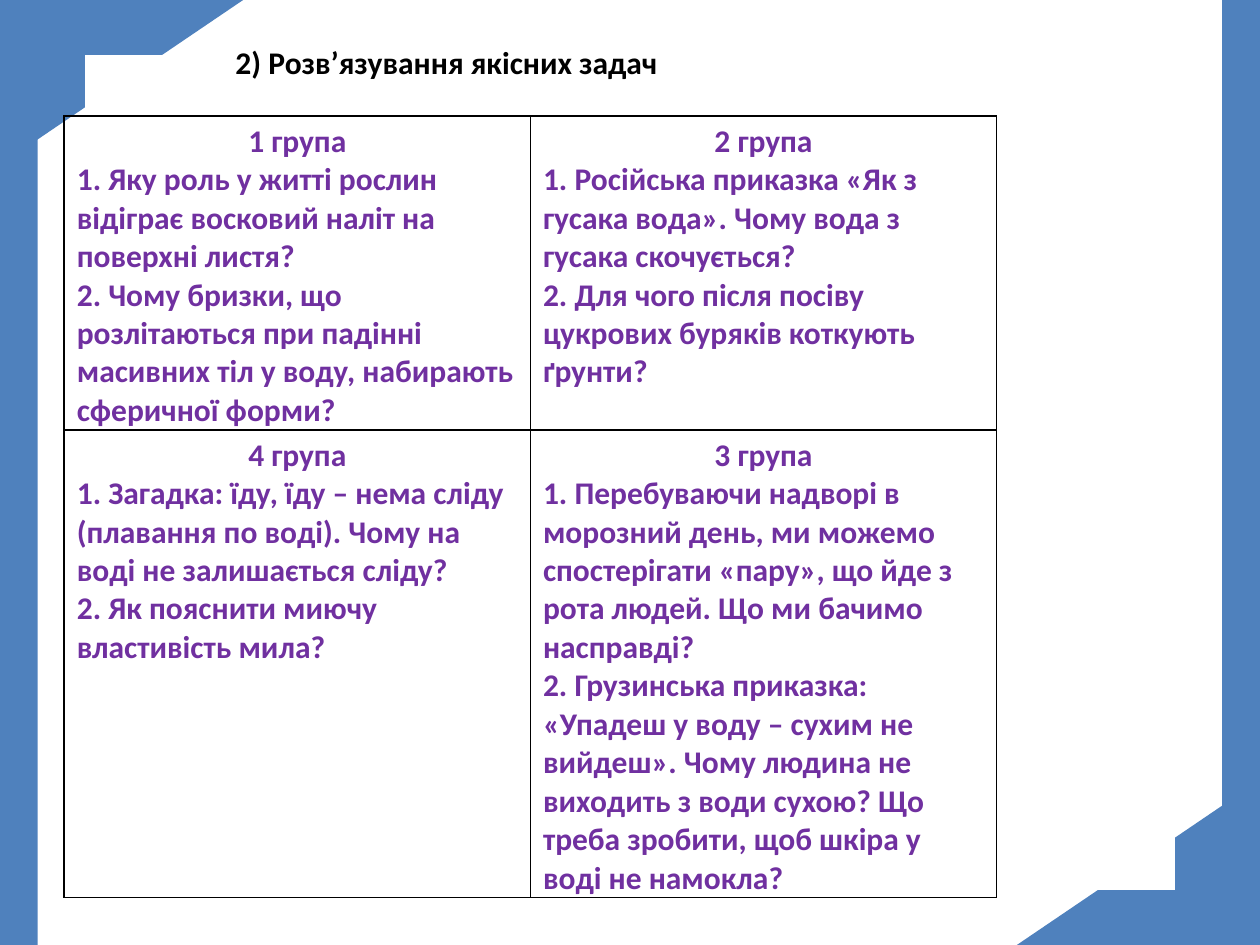
from lxml import etree
from pptx import Presentation
from pptx.dml.color import RGBColor
from pptx.enum.shapes import MSO_SHAPE
from pptx.enum.text import MSO_AUTO_SIZE, PP_ALIGN
from pptx.oxml.ns import qn
from pptx.util import Inches, Pt

BLUE = RGBColor(0x4F, 0x81, 0xBD)
PURPLE = RGBColor(0x70, 0x30, 0xA0)
BLACK = RGBColor(0, 0, 0)
RECTANGLE = MSO_SHAPE.RECTANGLE
HALF_FRAME = MSO_SHAPE.HALF_FRAME
LEFT = PP_ALIGN.LEFT
CENTER = PP_ALIGN.CENTER

SLIDE_WIDTH, SLIDE_HEIGHT = 10, 7.5


def write_paragraph(paragraph, text, color=BLACK, alignment=LEFT, size=18):
    paragraph.alignment = alignment
    run = paragraph.add_run()
    run.text = text
    run.font.name = "Calibri"
    run.font.size = Pt(size)
    run.font.bold = True
    run.font.color.rgb = color


def add_cell_borders(cell):
    properties = cell._tc.get_or_add_tcPr()
    for position, side in enumerate(("lnL", "lnR", "lnT", "lnB")):
        line = etree.Element(qn(f"a:{side}"), w=str(Pt(1)))
        fill = etree.SubElement(line, qn("a:solidFill"))
        etree.SubElement(fill, qn("a:srgbClr"), val=str(BLACK))
        properties.insert(position, line)


presentation = Presentation()
presentation.slide_width = Inches(SLIDE_WIDTH)
presentation.slide_height = Inches(SLIDE_HEIGHT)
slide = presentation.slides.add_slide(presentation.slide_layouts[6])

# Corner frames: the lower right one is the upper left one turned by 180 degrees
frame_parts = [
    (RECTANGLE, 0, 0.82, 0.3, 6.68),
    (HALF_FRAME, 0, 0, 1.93, 1.31),
]
for rotation in (0, 180):
    for kind, left, top, width, height in frame_parts:
        if rotation:
            left = SLIDE_WIDTH - left - width
            top = SLIDE_HEIGHT - top - height
        shape = slide.shapes.add_shape(
            kind, Inches(left), Inches(top), Inches(width), Inches(height))
        shape.rotation = rotation
        shape.shadow.inherit = False
        shape.fill.solid()
        shape.fill.fore_color.rgb = BLUE
        shape.line.fill.background()
        if kind == HALF_FRAME:
            shape.adjustments[0] = 0.333
            shape.adjustments[1] = 0.515

# Table of group tasks
groups = [
    [
        ("1 група",
         "1. Яку роль у житті рослин відіграє восковий наліт на поверхні листя?",
         "2. Чому бризки, що розлітаються при падінні масивних тіл у воду, "
         "набирають сферичної форми?"),
        ("2 група",
         "1. Російська приказка «Як з гусака вода». Чому вода з гусака скочується?",
         "2. Для чого після посіву цукрових буряків коткують ґрунти?"),
    ],
    [
        ("4 група",
         "1. Загадка: їду, їду – нема сліду (плавання по воді). "
         "Чому на воді не залишається сліду?",
         "2. Як пояснити миючу властивість мила?"),
        ("3 група",
         "1. Перебуваючи надворі в морозний день, ми можемо спостерігати «пару», "
         "що йде з рота людей. Що ми бачимо насправді?",
         "2. Грузинська приказка: «Упадеш у воду – сухим не вийдеш». "
         "Чому людина не виходить з води сухою? "
         "Що треба зробити, щоб шкіра у воді не намокла?"),
    ],
]
table = slide.shapes.add_table(
    2, 2, Inches(0.51), Inches(0.92), Inches(7.4), Inches(6.2)).table
table.first_row = False
table.horz_banding = False
for row, height in zip(table.rows, (2.4, 3.56)):
    row.height = Inches(height)

for row, row_groups in zip(table.rows, groups):
    for cell, texts in zip(row.cells, row_groups):
        cell.fill.background()
        cell.margin_left = cell.margin_right = Inches(0.1)
        cell.margin_top = Inches(0.05)
        cell.margin_bottom = 0
        add_cell_borders(cell)
        for index, text in enumerate(texts):
            frame = cell.text_frame
            paragraph = frame.add_paragraph() if index else frame.paragraphs[0]
            write_paragraph(paragraph, text, color=PURPLE,
                            alignment=LEFT if index else CENTER)

# Title
title = slide.shapes.add_textbox(
    Inches(1.77), Inches(0.29), Inches(5.35), Inches(0.4))
title.text_frame.word_wrap = True
title.text_frame.auto_size = MSO_AUTO_SIZE.SHAPE_TO_FIT_TEXT
write_paragraph(title.text_frame.paragraphs[0], "2) Розв’язування якісних задач")

presentation.save("out.pptx")
